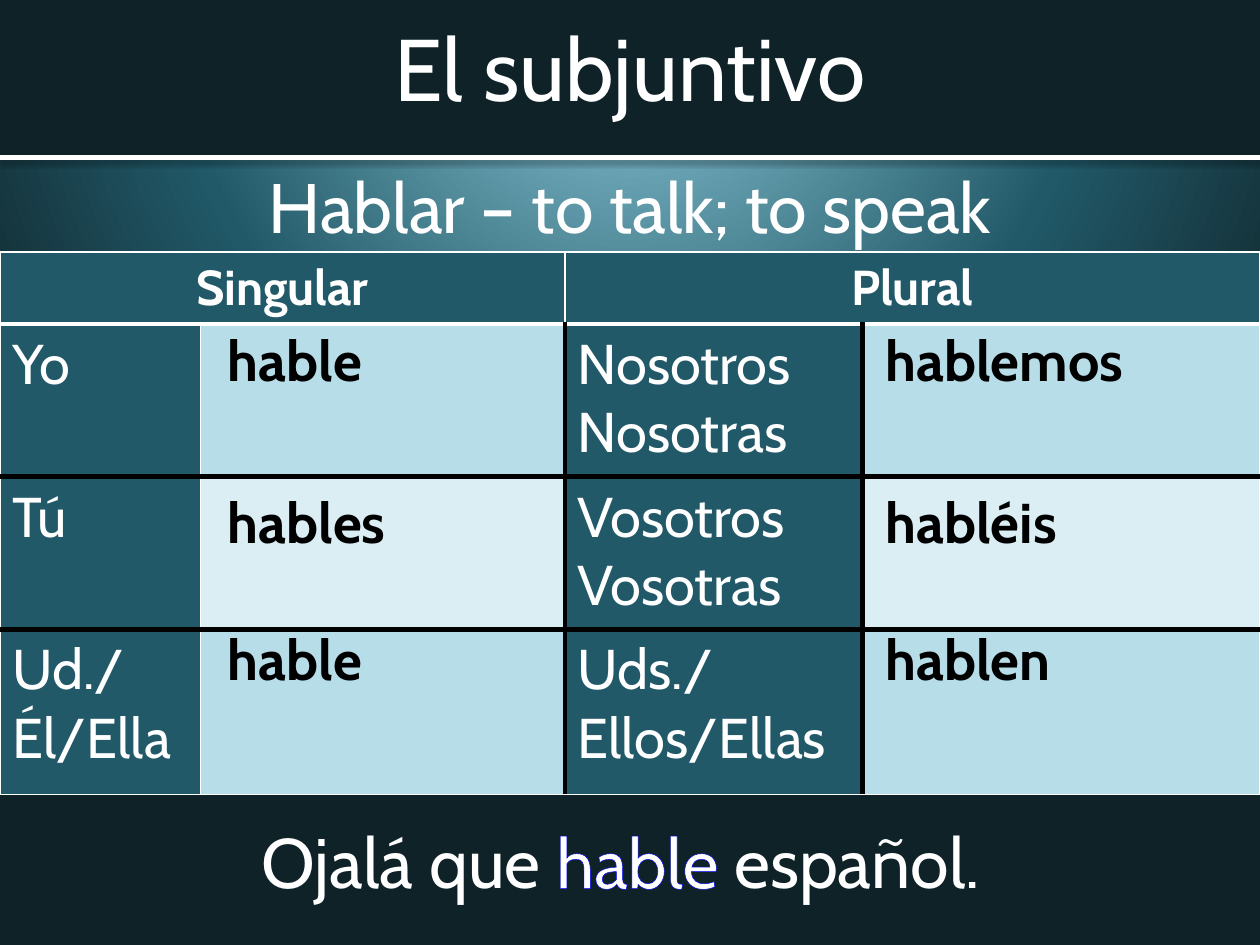
from lxml.etree import SubElement
from pptx import Presentation
from pptx.dml.color import RGBColor
from pptx.enum.shapes import MSO_CONNECTOR as Connector, MSO_SHAPE as Shape
from pptx.enum.text import MSO_ANCHOR as Anchor, PP_ALIGN as Align
from pptx.oxml import parse_xml
from pptx.oxml.ns import nsdecls, qn
from pptx.util import Cm, Pt

FONT = "Cabin"
COLORS = {"night": "0F2227", "teal": "215968", "sky": "93CDDD", "light": "B7DEE8",
          "pale": "DBEEF4", "white": "FFFFFF", "black": "000000", "outline": "0000FF"}
NO_GRID_STYLE = "{2D5ABB26-0587-4C30-8999-92F81FD0307C}"
WIDTH, HEIGHT, BANNER = 25.4, 19.05, 3.18

TITLE = "El subjuntivo"
VERB = "Hablar – to talk; to speak"
EXAMPLE = ["Ojalá que ", "hable ", "español."]
HEADERS = ["Singular", "Plural"]
PRONOUNS = [("Yo", "Nosotros\nNosotras"), ("Tú", "Vosotros\nVosotras"),
            ("Ud./Él/Ella", "Uds./Ellos/Ellas")]
FORMS = [("hable", "hablemos"), ("hables", "habléis"), ("hable", "hablen")]
COLUMN_WIDTHS = [4.04, 7.35, 6, 8.01]
ROW_HEIGHTS = [1.45, 3.08, 3.08, 3.33]
TABLE_TOP = 5.08
FORM_LEFTS = [4.34, 17.6]
FORM_TOPS = [6.48, 9.73, 12.5]
FORM_WIDTH, FORM_HEIGHT = 6.5, 1.6


def color(name):
    return RGBColor.from_string(COLORS[name])


def style(para, size, ink="white", bold=False, align=Align.LEFT):
    para.alignment = align
    para.font.name, para.font.size, para.font.bold = FONT, Pt(size), bold
    para.font.color.rgb = color(ink)


def add_text(page, left, top, width, height, spans, size, anchor=Anchor.TOP):
    box = page.shapes.add_textbox(Cm(left), Cm(top), Cm(width), Cm(height))
    frame = box.text_frame
    frame.word_wrap, frame.vertical_anchor = True, anchor
    para = frame.paragraphs[0]
    for words in spans:
        para.add_run().text = words
    style(para, size, align=Align.CENTER)
    return para


def add_grid(page, left, top, widths, heights):
    holder = page.shapes.add_table(len(heights), len(widths), Cm(left), Cm(top),
                                   Cm(sum(widths)), Cm(sum(heights)))
    grid = holder.table
    grid.first_row = grid.horz_banding = False
    next(holder.element.iter(qn("a:tableStyleId"))).text = NO_GRID_STYLE
    for column, width in zip(grid.columns, widths):
        column.width = Cm(width)
    for row, height in zip(grid.rows, heights):
        row.height = Cm(height)
    return grid


def fill_cell(cell, words, size, **look):
    cell.text = words
    for para in cell.text_frame.paragraphs:
        style(para, size, **look)


def add_line(parent, tag, name, points):
    line = SubElement(parent, qn(tag), w=str(Pt(points)))
    solid = SubElement(line, qn("a:solidFill"))
    SubElement(solid, qn("a:srgbClr"), val=COLORS[name])
    return line


def set_borders(cell, row, column):
    thin, rule, divider = ("white", 1), ("white", 3), ("black", 3)
    across = [thin, rule, divider, divider, thin]
    down = [thin, thin, divider, divider, thin] if row else [thin] * 5
    sides = {"L": down[column], "R": down[column + 1],
             "T": across[row], "B": across[row + 1]}
    for side, (name, points) in sides.items():
        add_line(cell._tc.get_or_add_tcPr(), f"a:ln{side}", name, points)


def add_background(page):
    stops = "".join(f'<a:gs pos="{pos}"><a:srgbClr val="{COLORS[name]}"/></a:gs>'
                    for pos, name in [(0, "sky"), (58000, "teal"), (100000, "night")])
    page.element.cSld.insert(0, parse_xml(
        f'<p:bg {nsdecls("p", "a")}><p:bgPr><a:gradFill rotWithShape="1">'
        f'<a:gsLst>{stops}</a:gsLst><a:path path="circle">'
        '<a:fillToRect l="50000" t="-80000" r="50000" b="180000"/></a:path>'
        '</a:gradFill><a:effectLst/></p:bgPr></p:bg>'))


def add_banner(page):
    banner = page.shapes.add_shape(Shape.RECTANGLE, 0, 0, Cm(WIDTH), Cm(BANNER))
    banner.shadow.inherit = False
    banner.fill.solid()
    banner.fill.fore_color.rgb = color("night")
    banner.line.fill.background()
    add_text(page, 0, BANNER, WIDTH, 13.2, [VERB], 40)
    rule = page.shapes.add_connector(Connector.STRAIGHT, 0, Cm(BANNER),
                                     Cm(WIDTH), Cm(BANNER))
    rule.line.color.rgb, rule.line.width = color("white"), Pt(3)
    rule.element.spPr.append(parse_xml(
        f'<a:effectLst {nsdecls("a")}><a:outerShdw blurRad="{Pt(3.1)}" '
        f'dist="{Pt(1.6)}" dir="5400000" rotWithShape="0">'
        f'<a:srgbClr val="{COLORS["black"]}"><a:alpha val="38000"/></a:srgbClr>'
        '</a:outerShdw></a:effectLst>'))
    add_text(page, 0, 0, WIDTH, 2.7, [TITLE], 50, Anchor.MIDDLE)


def add_conjugation(page):
    grid = add_grid(page, 0, TABLE_TOP, COLUMN_WIDTHS, ROW_HEIGHTS)
    for row in range(len(ROW_HEIGHTS)):
        for column in range(len(COLUMN_WIDTHS)):
            cell = grid.cell(row, column)
            set_borders(cell, row, column)
            band = "pale" if row == 2 else "light"
            cell.fill.solid()
            cell.fill.fore_color.rgb = color(band if row and column % 2 else "teal")
    for half, header in enumerate(HEADERS):
        first = grid.cell(0, 2 * half)
        first.merge(grid.cell(0, 2 * half + 1))
        fill_cell(first, header, 28, bold=True, align=Align.CENTER)
        for row, pair in enumerate(PRONOUNS, 1):
            fill_cell(grid.cell(row, 2 * half), pair[half], 32)
    for half, left in enumerate(FORM_LEFTS):
        for top, pair in zip(FORM_TOPS, FORMS):
            label = add_grid(page, left, top, [FORM_WIDTH], [FORM_HEIGHT]).cell(0, 0)
            label.fill.background()
            fill_cell(label, pair[half], 32, ink="black", bold=True)


def main():
    deck = Presentation()
    deck.slide_width, deck.slide_height = Cm(WIDTH), Cm(HEIGHT)
    page = deck.slides.add_slide(deck.slide_layouts[6])
    add_background(page)
    add_banner(page)
    add_conjugation(page)
    example = add_text(page, 1.35, 16.38, 22.33, 1.96, EXAMPLE, 40)
    span = example.runs[1]
    add_line(span.font._element, "a:ln", "outline", 0.75)
    span.font.color.rgb = color("white")
    deck.save("out.pptx")


if __name__ == "__main__":
    main()
